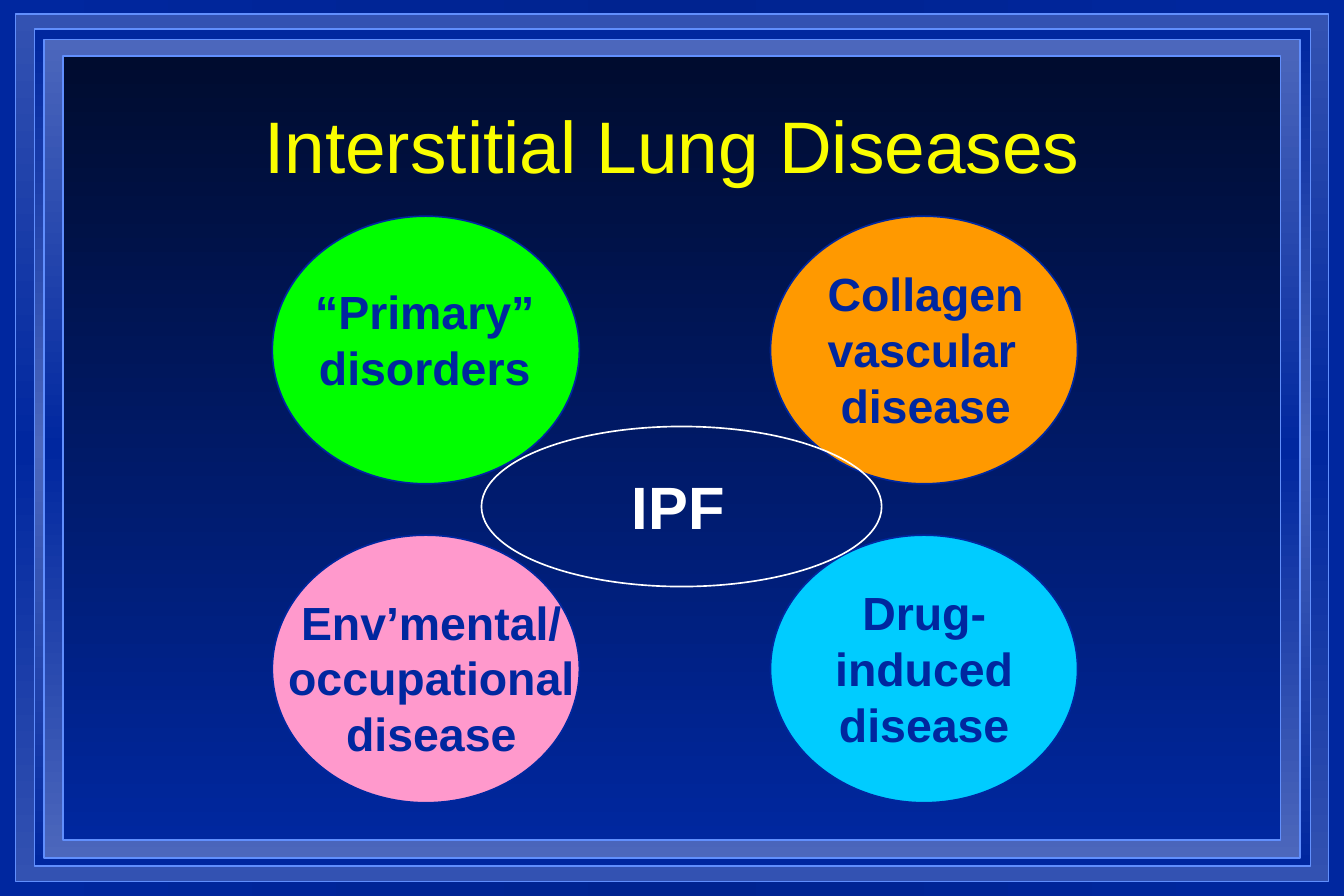
from copy import deepcopy
from pptx import Presentation
from pptx.dml.color import RGBColor
from pptx.enum.shapes import MSO_SHAPE as Shape
from pptx.enum.text import MSO_ANCHOR as Anchor, PP_ALIGN as Align
from pptx.util import Inches, Pt

NAVY, EDGE, WHITE = "00279F", "618FFD", "FFFFFF"
rgb = RGBColor.from_string


def blend(fill, node, colors, angle):
    """Give fill, found under node, evenly spaced gradient colours."""
    fill.gradient()
    fill.gradient_angle = angle
    stops = node.xpath(".//a:gsLst")[0]
    for _ in colors[2:]:
        stops.append(deepcopy(stops[-1]))
    for i, (stop, color) in enumerate(zip(fill.gradient_stops, colors)):
        stop.color.rgb = rgb(color)
        stop.position = i / (len(colors) - 1)


def write(box, text, size=28, color=NAVY, bold=True, align=Align.CENTER,
          anchor=Anchor.TOP, wrap=False):
    frame = box.text_frame
    frame.text = text
    frame.word_wrap = wrap
    frame.vertical_anchor = anchor
    for para in frame.paragraphs:
        para.alignment = align
        font = para.runs[0].font
        font.name, font.size, font.bold = "Arial", Pt(size), bold
        font.color.rgb = rgb(color)


deck = Presentation()
deck.slide_width, deck.slide_height = Inches(11.25), Inches(7.5)
slide = deck.slides.add_slide(deck.slide_layouts[5])
shapes = slide.shapes
blend(slide.background.fill, slide.element, [NAVY, "002390", NAVY], 0)

# Nested frames, from the outside in
frames = [
    (0.13, 0.12, 10.99, 7.26, ["3352B2", NAVY, "3352B2"]),
    (0.29, 0.24, 10.68, 7.01, [NAVY, "4C67BC", NAVY]),
    (0.37, 0.33, 10.51, 6.85, ["4C67BC", NAVY, "4C67BC"]),
    (0.53, 0.47, 10.19, 6.56, ["000C2F", NAVY]),
]
for *place, colors in frames:
    frame = shapes.add_shape(Shape.RECTANGLE, *map(Inches, place))
    frame.shadow.inherit = False
    blend(frame.fill, frame.element, colors, 270)
    frame.line.color.rgb = rgb(EDGE)
    frame.line.width = Pt(1)

# Title, brought in front of the frames
title = shapes.title
title.left, title.top = Inches(1.38), Inches(0.58)
title.width, title.height = Inches(8.5), Inches(1.25)
write(title, "Interstitial Lung Diseases", size=44, color="FAFD00", bold=False,
      anchor=Anchor.MIDDLE, wrap=True)
title.element.getparent().append(title.element)

# Four disease groups, then the outline that overlaps them
left, right, top, low = 2.28, 6.45, 1.81, 4.48
ovals = [
    (left, top, 2.57, 2.24, "00FF00", NAVY),
    (left, low, 2.57, 2.24, "FF99CC", NAVY),
    (right, top, 2.57, 2.24, "FF9900", NAVY),
    (right, low, 2.57, 2.24, "00CCFF", NAVY),
    (4.03, 3.57, 3.35, 1.34, None, WHITE),
]
for *place, color, edge in ovals:
    oval = shapes.add_shape(Shape.OVAL, *map(Inches, place))
    oval.shadow.inherit = False
    if color:
        oval.fill.solid()
        oval.fill.fore_color.rgb = rgb(color)
    else:
        oval.fill.background()
    oval.line.color.rgb = rgb(edge)
    oval.line.width = Pt(1)

labels = [
    (2.53, 2.32, 2.05, 1.04, "“Primary”\ndisorders", {}),
    (6.83, 2.17, 1.84, 1.5, "Collagen\nvascular\n disease", {"align": Align.LEFT}),
    (2.31, 4.92, 2.6, 1.5, "Env’mental/\noccupational\ndisease", {}),
    (6.89, 4.84, 1.69, 1.5, "Drug-\ninduced\ndisease", {}),
    (5.19, 3.88, 0.98, 0.7, "IPF", {"size": 36, "color": WHITE, "align": Align.LEFT}),
]
for *place, text, style in labels:
    write(shapes.add_textbox(*map(Inches, place)), text, **style)

deck.save("out.pptx")
